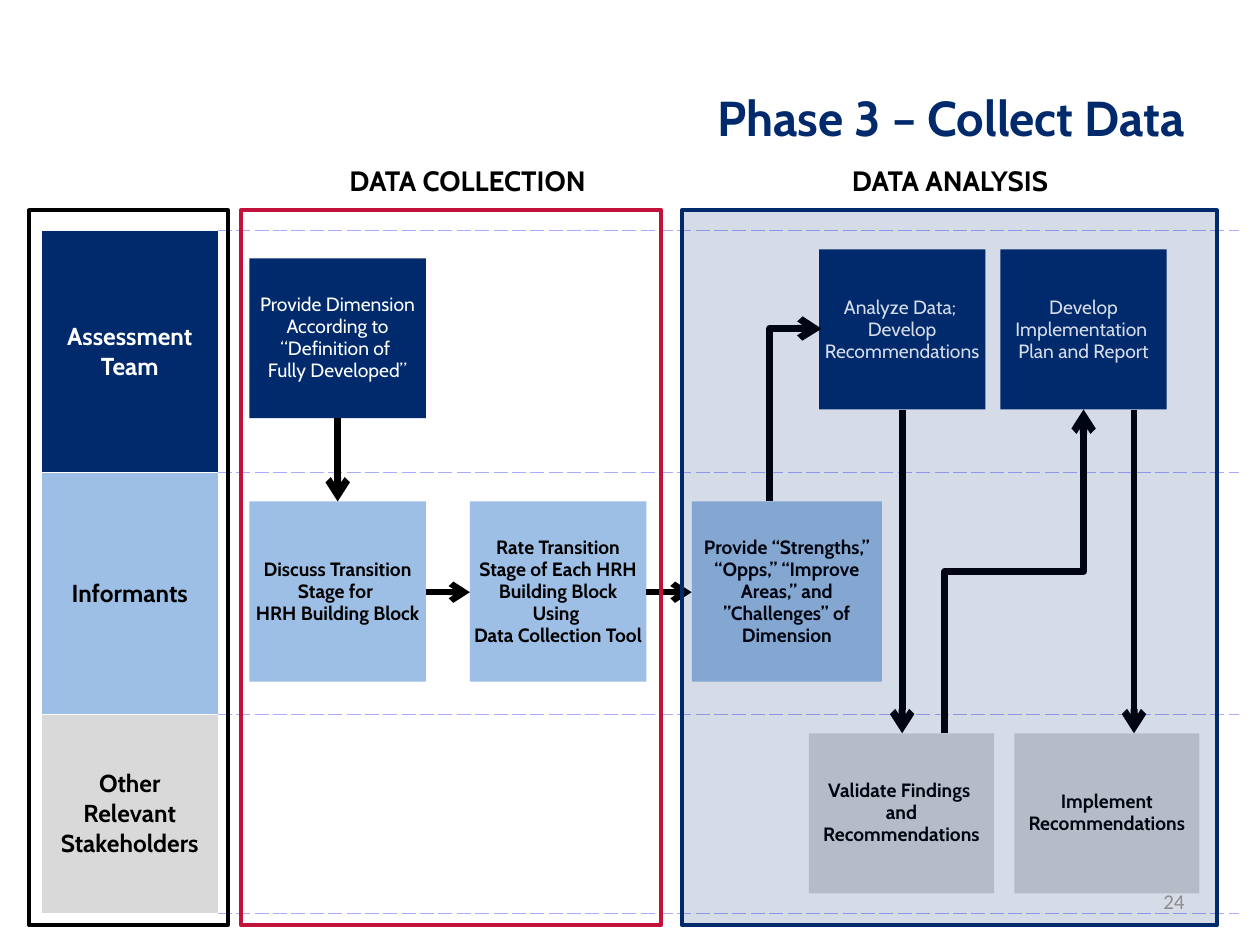
from lxml.etree import SubElement
from pptx import Presentation
from pptx.dml.color import RGBColor
from pptx.enum.dml import MSO_LINE
from pptx.enum.shapes import MSO_CONNECTOR, MSO_SHAPE
from pptx.enum.text import MSO_ANCHOR, PP_ALIGN
from pptx.oxml import parse_xml
from pptx.oxml.ns import nsdecls, qn
from pptx.util import Inches, Pt

"""Build the Phase 3 data collection and analysis swimlane slide."""

NAVY, BLUE, GRAY = "002A6C", "9DBFE5", "D9D9D9"
BLACK, WHITE, RED, LILAC = "000000", "FFFFFF", "C2113A", "AAAAFF"


def write(frame, text, size, color, bold=True, align=PP_ALIGN.CENTER, font="Cabin"):
    frame.word_wrap = True
    para = frame.paragraphs[0]
    para.text = text
    para.alignment = align
    para.font.name = font
    para.font.size = Pt(size)
    para.font.bold = bold
    para.font.color.rgb = RGBColor.from_string(color)
    return para


def add_arrow(kind, x1, y1, x2, y2, weight):
    arrow = page.shapes.add_connector(kind, Inches(x1), Inches(y1), Inches(x2), Inches(y2))
    arrow.line.color.rgb = RGBColor.from_string(BLACK)
    arrow.line.width = Pt(weight)
    SubElement(arrow.line._get_or_add_ln(), qn("a:tailEnd"), type="arrow")
    SubElement(arrow._element.spPr, qn("a:effectLst"))
    return arrow


deck = Presentation()
deck.slide_width, deck.slide_height = Inches(10), Inches(7.5)
page = deck.slides.add_slide(deck.slide_layouts[6])

labels = [
    ("Phase 3 – Collect Data", 0.5, 0.3, 9, 1.25, 28, NAVY, PP_ALIGN.RIGHT),
    ("DATA COLLECTION", 2.42, 1.25, 2.58, 0.37, 16, BLACK, PP_ALIGN.CENTER),
    ("DATA ANALYSIS", 6.25, 1.25, 2.58, 0.37, 16, BLACK, PP_ALIGN.CENTER),
]
for text, left, top, width, height, size, color, align in labels:
    box = page.shapes.add_textbox(Inches(left), Inches(top), Inches(width), Inches(height))
    box.text_frame.vertical_anchor = MSO_ANCHOR.MIDDLE
    write(box.text_frame, text, size, color, align=align)

lanes = [
    ("Assessment Team", 1.92, NAVY, WHITE),
    ("Informants", 1.92, BLUE, BLACK),
    ("Other Relevant Stakeholders", 1.58, GRAY, BLACK),
]
grid = page.shapes.add_table(3, 2, Inches(0.33), Inches(1.83), Inches(9.5), Inches(5.42)).table
grid.first_row = grid.horz_banding = False
grid._tbl.tblPr.find(qn("a:tableStyleId")).text = "{2D5ABB26-0587-4C30-8999-92F81FD0307C}"
grid.columns[0].width, grid.columns[1].width = Inches(1.4), Inches(8.1)
for index, (text, height, fill, color) in enumerate(lanes):
    grid.rows[index].height = Inches(height)
    name_cell, lane_cell = grid.cell(index, 0), grid.cell(index, 1)
    for cell, edge, dash in ((name_cell, WHITE, "solid"), (lane_cell, LILAC, "sysDash")):
        for side in ("lnT", "lnB"):
            cell._tc.get_or_add_tcPr().append(parse_xml(
                f'<a:{side} {nsdecls("a")} w="12700"><a:solidFill><a:srgbClr val="{edge}"/>'
                f'</a:solidFill><a:prstDash val="{dash}"/></a:{side}>'))
    lane_cell.fill.background()
    name_cell.fill.solid()
    name_cell.fill.fore_color.rgb = RGBColor.from_string(fill)
    name_cell.vertical_anchor = MSO_ANCHOR.MIDDLE
    name_cell.margin_left = name_cell.margin_right = Inches(0.08)
    name_cell.margin_top = name_cell.margin_bottom = Inches(0.08)
    write(name_cell.text_frame, text, 14, color)

steps = [
    ("Provide Dimension According to “Definition of \nFully Developed”", 1.98, 2.05, 1.4, 1.27, NAVY),
    ("Analyze Data; \nDevelop Recommendations", 6.5, 1.98, 1.32, 1.27, NAVY),
    ("Develop Implementation \nPlan and Report", 7.94, 1.98, 1.32, 1.27, NAVY),
    ("Discuss Transition Stage for \nHRH Building Block", 1.98, 3.98, 1.4, 1.43, BLUE),
    ("Rate Transition Stage of Each HRH Building Block Using \nData Collection Tool",
     3.73, 3.98, 1.4, 1.43, BLUE),
    ("Provide “Strengths,” “Opps,” “Improve Areas,” and ”Challenges” of Dimension",
     5.49, 3.98, 1.51, 1.43, BLUE),
    ("Validate Findings \nand Recommendations", 6.42, 5.82, 1.47, 1.27, GRAY),
    ("Implement Recommendations", 8.05, 5.82, 1.47, 1.27, GRAY),
]
for text, left, top, width, height, fill in steps:
    box = page.shapes.add_shape(
        MSO_SHAPE.RECTANGLE, Inches(left), Inches(top), Inches(width), Inches(height))
    box.shadow.inherit = False
    box.fill.solid()
    box.fill.fore_color.rgb = RGBColor.from_string(fill)
    box.line.fill.background()
    frame = box.text_frame
    frame.vertical_anchor = MSO_ANCHOR.MIDDLE
    frame.margin_left = frame.margin_right = Inches(0.03)
    frame.margin_top = frame.margin_bottom = Inches(0.03)
    dark = fill == NAVY
    para = write(frame, text, 11, WHITE if dark else BLACK, bold=not dark)
    para.line_spacing = 0.95

straight_arrows = [
    (2.68, 3.32, 2.68, 3.98, 4),
    (3.38, 4.7, 3.73, 4.7, 3.5),
    (5.13, 4.7, 5.49, 4.7, 3.5),
    (7.16, 3.25, 7.16, 5.82, 4),
    (9, 3.25, 9, 5.82, 4),
]
for x1, y1, x2, y2, weight in straight_arrows:
    add_arrow(MSO_CONNECTOR.STRAIGHT, x1, y1, x2, y2, weight)

rising_arrows = [(6.11, 3.98, 6.52, 2.61, 100200), (7.5, 5.82, 8.6, 3.25, 50000)]
for x1, y1, x2, y2, bend in rising_arrows:
    middle_x, middle_y = (x1 + x2) / 2, (y1 + y2) / 2
    half_rise, half_run = (y1 - y2) / 2, (x2 - x1) / 2
    arrow = add_arrow(
        MSO_CONNECTOR.ELBOW, middle_x + half_rise, middle_y + half_run,
        middle_x - half_rise, middle_y - half_run, 4)
    properties = arrow._element.spPr
    properties.find(qn("a:xfrm")).set("rot", "5400000")
    adjustments = properties.find(qn("a:prstGeom")).find(qn("a:avLst"))
    SubElement(adjustments, qn("a:gd"), name="adj1", fmla=f"val {bend}")

panels = [(1.91, 3.34, RED), (0.23, 1.58, BLACK), (5.41, 4.25, NAVY)]
for left, width, color in panels:
    panel = page.shapes.add_shape(
        MSO_SHAPE.RECTANGLE, Inches(left), Inches(1.67), Inches(width), Inches(5.67))
    panel.shadow.inherit = False
    panel.line.color.rgb = RGBColor.from_string(color)
    panel.line.width = Pt(2.25)
    panel.fill.background()
panel.fill.solid()
panel.fill.fore_color.rgb = RGBColor.from_string(NAVY)
tint = panel._element.spPr.find(qn("a:solidFill")).find(qn("a:srgbClr"))
SubElement(tint, qn("a:alpha"), val="16000")

number = page.shapes.add_textbox(Inches(7.17), Inches(6.95), Inches(2.33), Inches(0.4))
number.text_frame.vertical_anchor = MSO_ANCHOR.MIDDLE
write(number.text_frame, "24", 12, "8C8C8C", False, PP_ALIGN.RIGHT, "Calibri")

deck.save("out.pptx")
